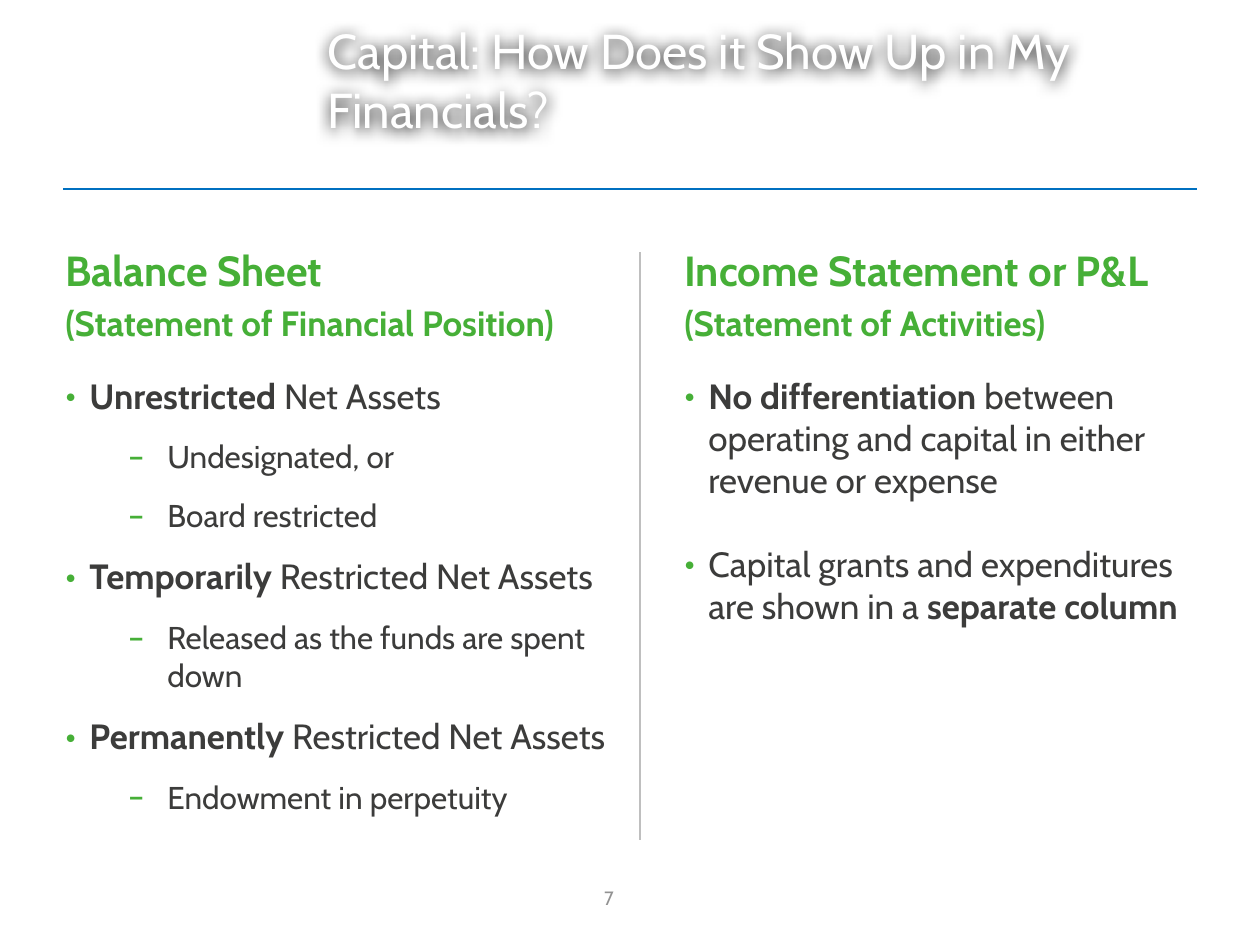
"""Build the slide on how capital shows up in the financial statements."""
from dataclasses import dataclass

import pptx
import pptx.dml.color
import pptx.enum.shapes
import pptx.enum.text
import pptx.oxml
import pptx.oxml.ns
import pptx.util

PX = 914400 / 126
NS = pptx.oxml.ns.nsdecls("a")
ALIGN = pptx.enum.text.PP_ALIGN
ANCHOR = pptx.enum.text.MSO_ANCHOR


@dataclass(frozen=True)
class Theme:
    font: str = "Cabin"
    white: str = "FFFFFF"
    shadow: str = "000000"
    green: str = "46AF37"
    ink: str = "3C3C3B"
    muted: str = "929292"
    rule: str = "0070C0"
    divider: str = "BFBFBF"
    title: int = 28
    heading: int = 24
    body: int = 20
    sub: int = 18
    number: int = 11


@dataclass(frozen=True)
class Level:
    size: int
    bullet: str
    margin: int
    hang: int


@dataclass(frozen=True)
class Item:
    runs: tuple[tuple[str, bool], ...]
    level: int = 0


@dataclass(frozen=True)
class Column:
    x: int
    body_w: int
    gap: int
    heading: str
    subheading: str
    items: tuple[Item, ...]


T = Theme()
LEVELS = (Level(T.body, "•", 24, 24), Level(T.sub, "–", 102, 39))
COLUMNS = (
    Column(53, 587, 6, "Balance Sheet", "(Statement of Financial Position)", (
        Item((("Unrestricted", True), (" Net Assets", False))),
        Item((("Undesignated, or", False),), 1),
        Item((("Board restricted", False),), 1),
        Item((("Temporarily", True), (" Restricted Net Assets", False))),
        Item((("Released as the funds are spent down", False),), 1),
        Item((("Permanently", True), (" Restricted Net Assets", False))),
        Item((("Endowment in perpetuity", False),), 1),
    )),
    Column(672, 557, 12, "Income Statement or P&L", "(Statement of Activities)", (
        Item((("No differentiation ", True),
              ("between operating and capital in either revenue or expense", False))),
        Item((("Capital grants and expenditures are shown in a ", False),
              ("separate column", True))),
    )),
)


def px(n: int) -> int:
    """Turn pixels into EMU."""
    return round(n * PX)


def rgb(color: str) -> pptx.dml.color.RGBColor:
    """Turn a hex string into a colour."""
    return pptx.dml.color.RGBColor.from_string(color)


def add_box(s, x: int, y: int, w: int, h: int, anchor=ANCHOR.TOP):
    """Add a wrapping text box."""
    sp = s.shapes.add_textbox(px(x), px(y), px(w), px(h))
    sp.text_frame.word_wrap = True
    sp.text_frame.vertical_anchor = anchor
    return sp


def add_paragraph(tf, first: bool, before: int = 0, after: int = 0, align=ALIGN.LEFT):
    """Return the first paragraph of a frame or append a spaced one."""
    p = tf.paragraphs[0] if first else tf.add_paragraph()
    p.alignment = align
    p.space_before = pptx.util.Pt(0 if first else before)
    p.space_after = pptx.util.Pt(after)
    return p


def add_run(p, text: str, *, size: int, color: str, bold: bool = False) -> None:
    """Append formatted text to a paragraph."""
    r = p.add_run()
    r.text = text
    r.font.name = T.font
    r.font.size = pptx.util.Pt(size)
    r.font.bold = bold
    r.font.color.rgb = rgb(color)


def add_bullet(p, level: Level) -> None:
    """Give a paragraph a hanging green bullet."""
    pPr = p._p.get_or_add_pPr()
    pPr.set("marL", str(px(level.margin)))
    pPr.set("indent", str(-px(level.hang)))
    for xml in (
        f'<a:buClr {NS}><a:srgbClr val="{T.green}"/></a:buClr>',
        f'<a:buFont {NS} typeface="{T.font}"/>',
        f'<a:buChar {NS} char="{level.bullet}"/>',
    ):
        pPr.append(pptx.oxml.parse_xml(xml))


def add_line(s, x1: int, y1: int, x2: int, y2: int, color: str) -> None:
    """Draw a straight rule without shadow."""
    cn = s.shapes.add_connector(
        pptx.enum.shapes.MSO_CONNECTOR.STRAIGHT, px(x1), px(y1), px(x2), px(y2))
    cn.line.color.rgb = rgb(color)
    cn.line.width = pptx.util.Pt(1.5)
    cn._element.spPr.append(pptx.oxml.parse_xml(f"<a:effectLst {NS}/>"))


def add_title(s, text: str) -> None:
    """Add the white title with its soft shadow."""
    sp = add_box(s, 315, 19, 882, 120, ANCHOR.MIDDLE)
    add_run(add_paragraph(sp.text_frame, True), text, size=T.title, color=T.white)
    blur, dist = pptx.util.Pt(8.5), pptx.util.Pt(1)
    sp._element.spPr.append(pptx.oxml.parse_xml(
        f'<a:effectLst {NS}><a:outerShdw blurRad="{blur}" dist="{dist}" dir="5400000" '
        f'algn="tl" rotWithShape="0"><a:srgbClr val="{T.shadow}"/></a:outerShdw></a:effectLst>'))


def add_column(s, col: Column) -> None:
    """Add a heading and its bulleted list."""
    tf = add_box(s, col.x, 262, 557, 88, ANCHOR.BOTTOM).text_frame
    add_run(add_paragraph(tf, True), col.heading, size=T.heading, color=T.green, bold=True)
    add_run(add_paragraph(tf, False, before=4), col.subheading,
            size=T.body, color=T.green, bold=True)
    tf = add_box(s, col.x, 368, col.body_w, 451).text_frame
    for i, item in enumerate(col.items):
        level = LEVELS[item.level]
        p = add_paragraph(tf, i == 0, col.gap, col.gap)
        p.level = item.level
        add_bullet(p, level)
        for text, bold in item.runs:
            add_run(p, text, size=level.size, color=T.ink, bold=bold)


def main() -> None:
    """Build and save the slide."""
    prs = pptx.Presentation()
    prs.slide_width, prs.slide_height = px(1260), px(945)
    s = prs.slides.add_slide(prs.slide_layouts[6])
    add_line(s, 63, 189, 1197, 189, T.rule)
    tf = add_box(s, 462, 873, 294, 50, ANCHOR.MIDDLE).text_frame
    add_run(add_paragraph(tf, True, align=ALIGN.CENTER), "7", size=T.number, color=T.muted)
    for col in COLUMNS:
        add_column(s, col)
    add_title(s, "Capital: How Does it Show Up in My Financials?")
    add_line(s, 640, 252, 640, 840, T.divider)
    prs.save("out.pptx")


if __name__ == "__main__":
    main()
